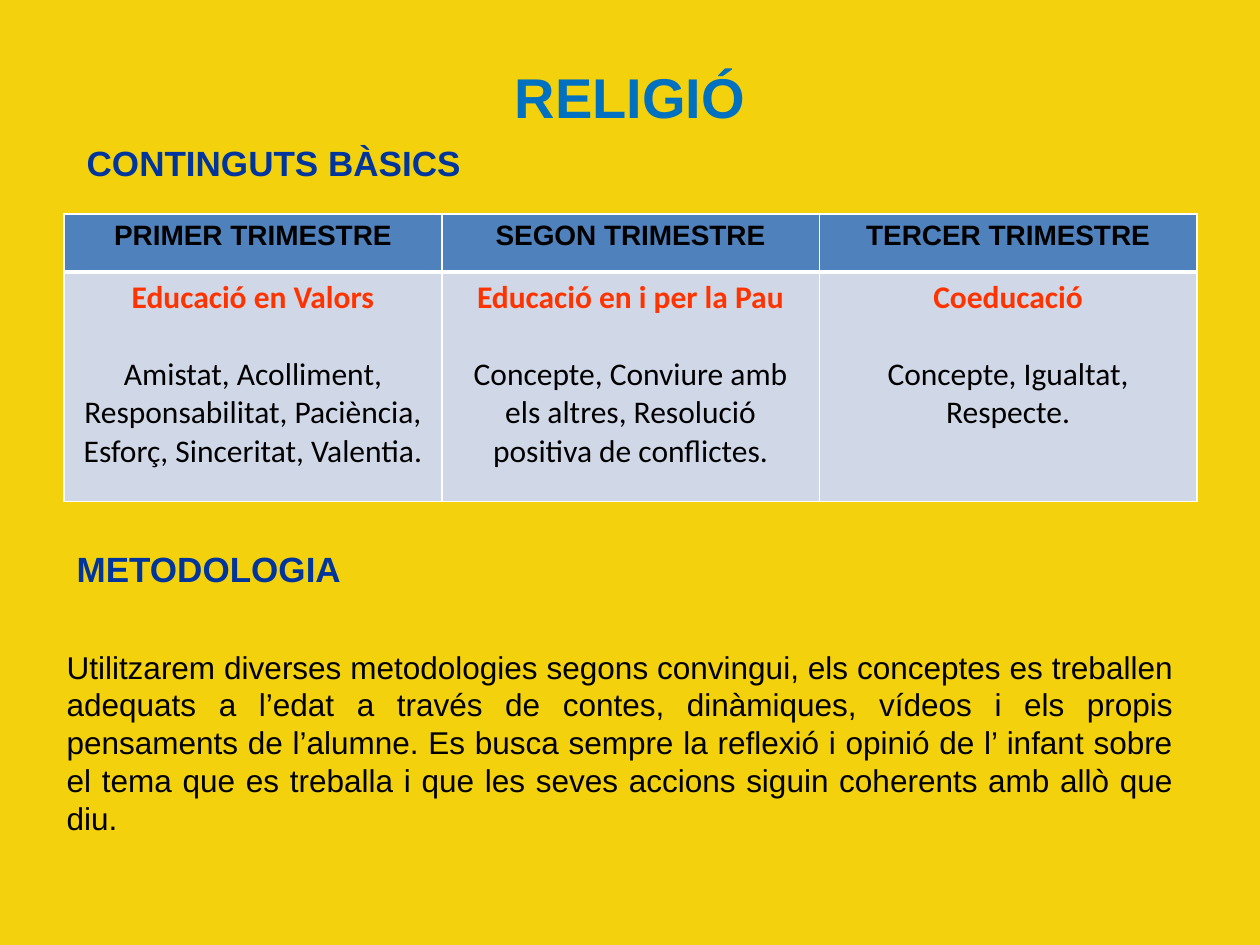
"""Build the slide on the contents and methodology of the Religió subject."""
from lxml import etree
from pptx import Presentation
from pptx.dml.color import RGBColor
from pptx.enum.text import MSO_ANCHOR, PP_ALIGN
from pptx.oxml.ns import qn
from pptx.util import Inches, Pt

LEFT, CENTER, JUSTIFY = PP_ALIGN.LEFT, PP_ALIGN.CENTER, PP_ALIGN.JUSTIFY
TOP, MIDDLE = MSO_ANCHOR.TOP, MSO_ANCHOR.MIDDLE
YELLOW = RGBColor(0xF3, 0xD2, 0x0D)
TITLE_BLUE = RGBColor(0x00, 0x70, 0xC0)
HEADING_BLUE = RGBColor(0x00, 0x35, 0x9E)
HEADER_FILL = RGBColor(0x4F, 0x81, 0xBD)
BODY_FILL = RGBColor(0xD0, 0xD8, 0xE8)
RED = RGBColor(0xFF, 0x33, 0x00)
BLACK = RGBColor(0x00, 0x00, 0x00)
WHITE = RGBColor(0xFF, 0xFF, 0xFF)


def write(para, text, size=18, font="Arial", color=BLACK, bold=False, align=LEFT, before=0):
    para.alignment = align
    para.space_before = Pt(before)
    span = para.add_run()
    span.text = text
    span.font.size = Pt(size)
    span.font.name = font
    span.font.bold = bold
    span.font.color.rgb = color


def style_cell(cell, fill, bottom):
    properties = cell._tc.get_or_add_tcPr()
    for side, width in (("L", 1), ("R", 1), ("T", 1), ("B", bottom)):
        line = etree.SubElement(properties, qn(f"a:ln{side}"), w=str(Pt(width)))
        solid = etree.SubElement(line, qn("a:solidFill"))
        etree.SubElement(solid, qn("a:srgbClr"), val=str(WHITE))
    cell.fill.solid()
    cell.fill.fore_color.rgb = fill


deck = Presentation()
deck.slide_width, deck.slide_height = Inches(10), Inches(7.5)
COLUMN, ROW = deck.slide_width // 100, deck.slide_height // 75
page = deck.slides.add_slide(deck.slide_layouts[6])
page.background.fill.solid()
page.background.fill.fore_color.rgb = YELLOW

METHODOLOGY = (
    "Utilitzarem diverses metodologies segons convingui, els conceptes es treballen "
    "adequats a l’edat a través de contes, dinàmiques, vídeos i els propis pensaments "
    "de l’alumne. Es busca sempre la reflexió i opinió de l’ infant sobre el tema que es "
    "treballa i que les seves accions siguin coherents amb allò que diu."
)
heading = dict(size=20, color=HEADING_BLUE, bold=True)
text_boxes = [
    ("RELIGIÓ", (5, 3, 90, 9.3), MIDDLE, dict(size=32, color=TITLE_BLUE, bold=True, align=CENTER)),
    ("CONTINGUTS BÀSICS", (5.9, 10.7, 35.4, 4.4), TOP, heading),
    ("METODOLOGIA", (5.1, 43, 23.6, 7.7), TOP, heading),
    (METHODOLOGY, (4.3, 50.9, 89.8, 16.2), TOP, dict(align=JUSTIFY)),
]
for text, (left, top, width, height), anchor, style in text_boxes:
    box = page.shapes.add_textbox(
        int(left * COLUMN), int(top * ROW), int(width * COLUMN), int(height * ROW))
    box.text_frame.word_wrap = True
    box.text_frame.vertical_anchor = anchor
    write(box.text_frame.paragraphs[0], text, **style)

terms = [
    ("PRIMER TRIMESTRE", "Educació en Valors",
     "Amistat, Acolliment, Responsabilitat, Paciència, Esforç, Sinceritat, Valentia."),
    ("SEGON TRIMESTRE", "Educació en i per la Pau",
     "Concepte, Conviure amb els altres, Resolució positiva de conflictes."),
    ("TERCER TRIMESTRE", "Coeducació", "Concepte, Igualtat, Respecte."),
]
table = page.shapes.add_table(
    2, len(terms), int(5.1 * COLUMN), 17 * ROW, int(89.9 * COLUMN), int(22.8 * ROW)).table
table.rows[0].height, table.rows[1].height = int(4.6 * ROW), int(18.2 * ROW)
for index, (term, theme, contents) in enumerate(terms):
    header, body = table.cell(0, index), table.cell(1, index)
    style_cell(header, HEADER_FILL, bottom=3)
    style_cell(body, BODY_FILL, bottom=1)
    write(header.text_frame.paragraphs[0], term, size=16, bold=True, align=CENTER)
    write(body.text_frame.paragraphs[0], theme, font="Calibri", color=RED, bold=True, align=CENTER)
    write(body.text_frame.add_paragraph(), contents, font="Calibri", align=CENTER, before=22)

deck.save("out.pptx")
